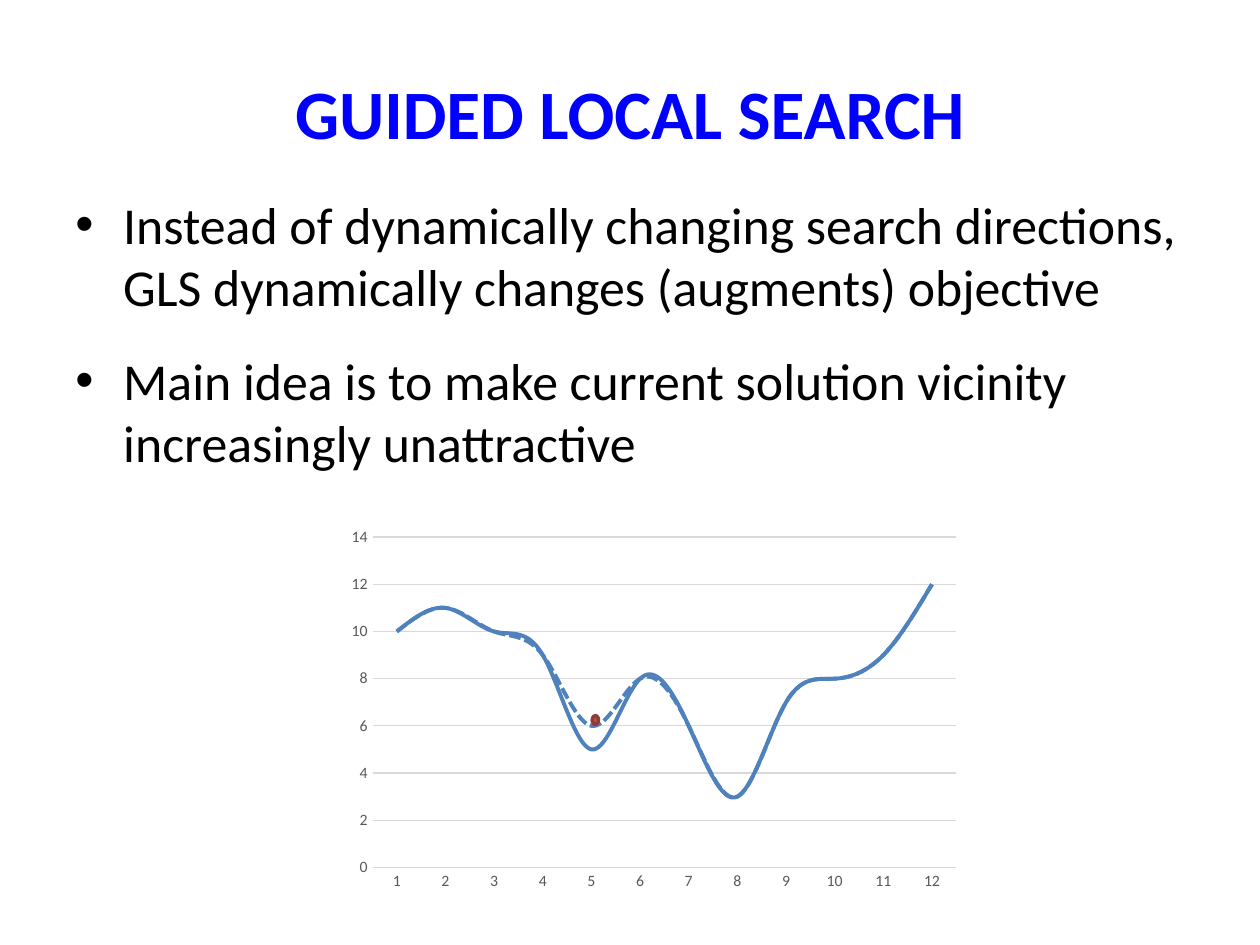
from lxml.etree import SubElement
from pptx import Presentation
from pptx.chart.data import CategoryChartData
from pptx.dml.color import RGBColor
from pptx.enum.chart import XL_CHART_TYPE as ChartType, XL_MARKER_STYLE as Marker, XL_TICK_MARK as Tick
from pptx.enum.dml import MSO_LINE_DASH_STYLE as Dash
from pptx.enum.shapes import MSO_SHAPE as Shape
from pptx.enum.text import MSO_ANCHOR as Anchor, PP_ALIGN as Align
from pptx.oxml.ns import qn
from pptx.util import Inches, Pt

FONT = "Calibri"
COLORS = {
    "title": "0000FF", "text": "000000", "label": "595959", "grid": "D9D9D9",
    "curve": "4F81BD", "solution": "C0504D", "solution_edge": "8E3B39",
}
BULLETS = [
    "Instead of dynamically changing search directions, GLS dynamically changes (augments) objective",
    "Main idea is to make current solution vicinity increasingly unattractive",
]
OBJECTIVE = [10, 11, 10, 9, 5, 8, 6, 3, 7, 8, 9, 12]
AUGMENTED = OBJECTIVE[:4] + [6] + OBJECTIVE[5:]


def color(name):
    return RGBColor.from_string(COLORS[name])


def box(*lengths):
    return [Inches(length) for length in lengths]


def style_font(font, size, color_name, bold=False):
    font.name, font.size, font.bold = FONT, Pt(size), bold
    font.color.rgb = color(color_name)


def style_line(line, color_name, width):
    line.color.rgb = color(color_name)
    line.width = Pt(width)


def add_title(slide, text):
    title = slide.shapes.title
    title.left, title.top, title.width, title.height = box(0.5, 0.5, 9, 0.78)
    title.text_frame.vertical_anchor = Anchor.MIDDLE
    paragraph = title.text_frame.paragraphs[0]
    paragraph.alignment = Align.CENTER
    run = paragraph.add_run()
    run.text = text
    style_font(run.font, 39.6, "title", bold=True)


def add_bullets(slide, texts):
    frame = slide.shapes.add_textbox(*box(0.5, 1.48, 9.5, 2.53)).text_frame
    frame.word_wrap = True
    for index, text in enumerate(texts):
        paragraph = frame.add_paragraph() if index else frame.paragraphs[0]
        paragraph.space_before = Pt(18 if index else 0)
        properties = paragraph._p.get_or_add_pPr()
        properties.set("marL", str(Inches(0.38)))
        properties.set("indent", str(Inches(-0.38)))
        SubElement(properties, qn("a:buFont"), typeface="Arial")
        SubElement(properties, qn("a:buChar"), char="•")
        run = paragraph.add_run()
        run.text = text
        style_font(run.font, 29.6, "text")


def style_axis(axis):
    axis.major_tick_mark = axis.minor_tick_mark = Tick.NONE
    style_font(axis.tick_labels.font, 9, "label")


def add_objective_chart(slide):
    data = CategoryChartData()
    data.categories = [str(number) for number in range(1, len(OBJECTIVE) + 1)]
    data.add_series("Series 1", OBJECTIVE)
    data.add_series("Series 2", AUGMENTED)
    chart = slide.shapes.add_chart(ChartType.LINE, *box(2.69, 4.13, 5, 3), data).chart
    chart.has_legend = chart.has_title = False
    style_font(chart.font, 10, "text")
    style_axis(chart.category_axis)
    style_line(chart.category_axis.format.line, "grid", 0.75)
    value_axis = chart.value_axis
    style_axis(value_axis)
    value_axis.minimum_scale, value_axis.maximum_scale, value_axis.major_unit = 0, 14, 2
    value_axis.format.line.fill.background()
    style_line(value_axis.major_gridlines.format.line, "grid", 0.75)
    plot = chart.plots[0]
    plot.vary_by_categories = False
    for series in plot.series:
        series.smooth = True
        series.marker.style = Marker.NONE
        style_line(series.format.line, "curve", 2.25)
    plot.series[1].format.line.dash_style = Dash.SQUARE_DOT


def add_current_solution(slide):
    dot = slide.shapes.add_shape(Shape.OVAL, *box(4.7, 5.68, 0.05, 0.07))
    dot.shadow.inherit = False
    dot.fill.solid()
    dot.fill.fore_color.rgb = color("solution")
    style_line(dot.line, "solution_edge", 2)


def main():
    presentation = Presentation()
    presentation.slide_width, presentation.slide_height = box(10, 7.5)
    slide = presentation.slides.add_slide(presentation.slide_layouts.get_by_name("Title Only"))
    add_title(slide, "GUIDED LOCAL SEARCH")
    add_objective_chart(slide)
    add_current_solution(slide)
    add_bullets(slide, BULLETS)
    presentation.save("out.pptx")


if __name__ == "__main__":
    main()
